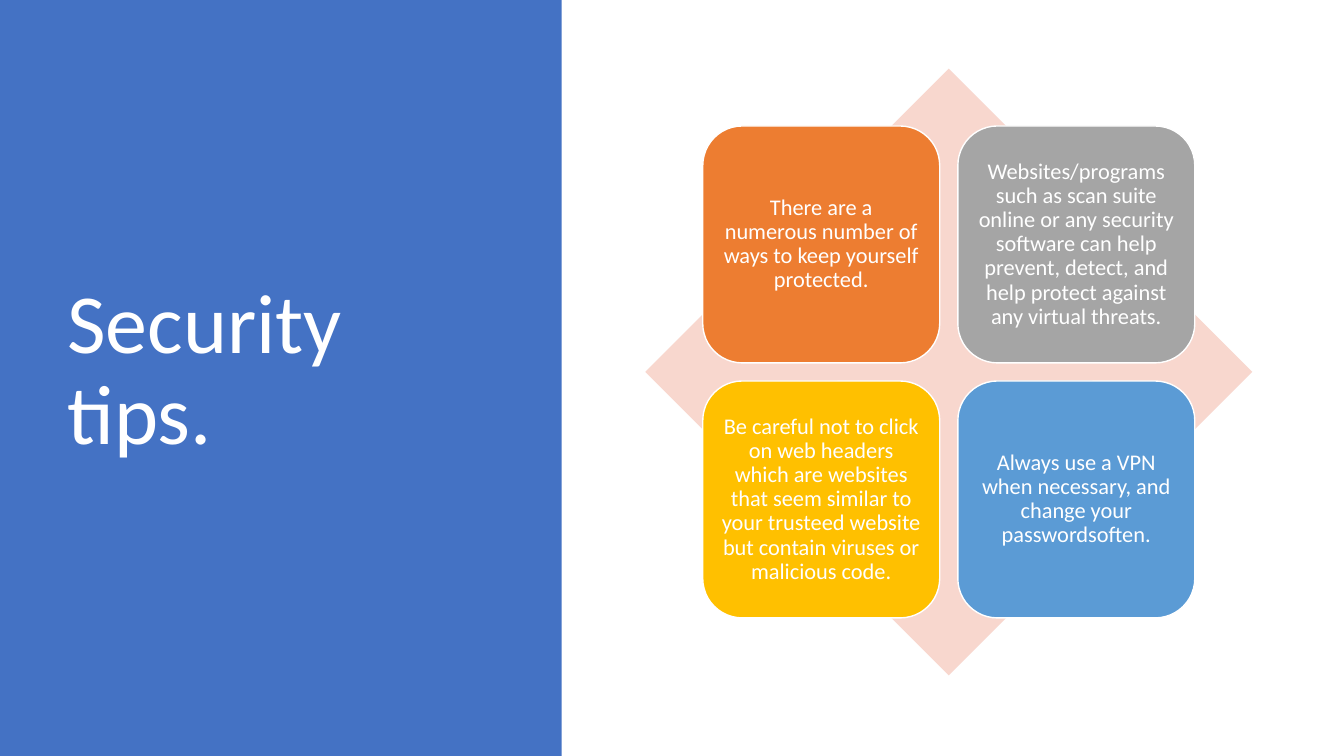
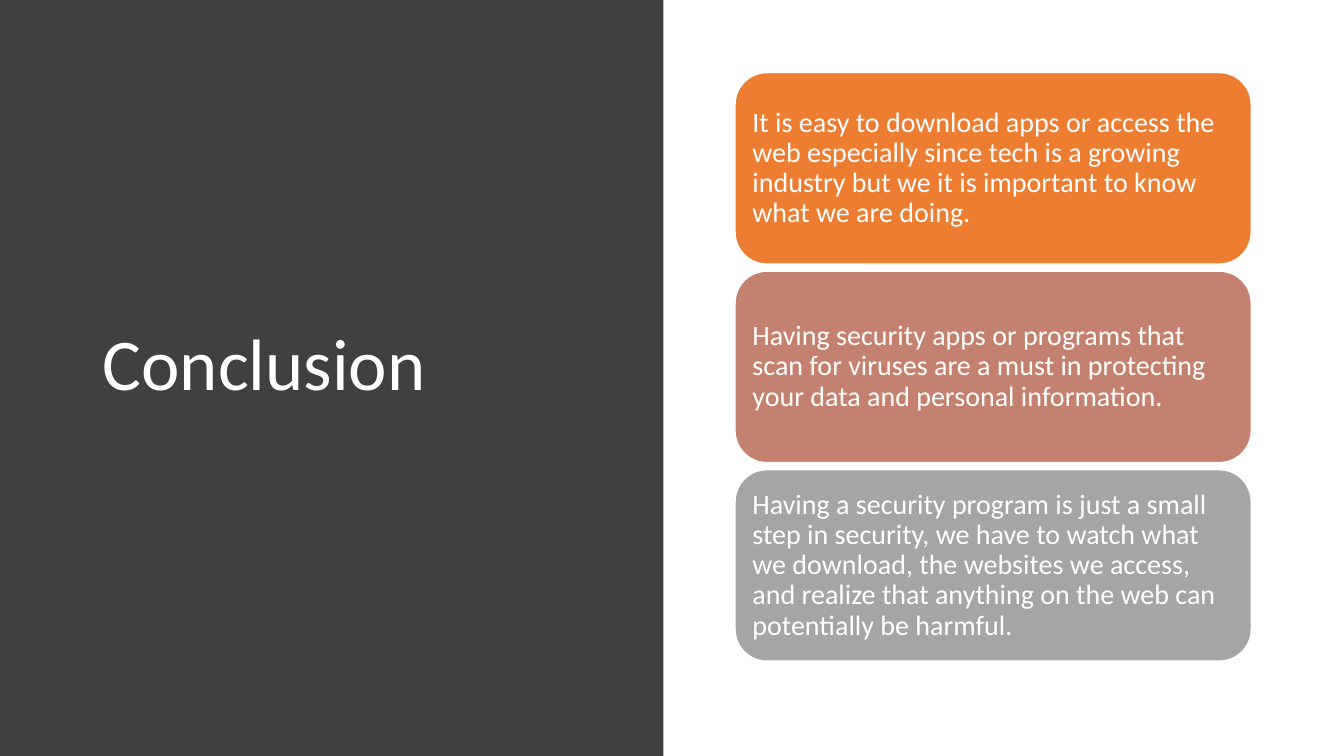
from pptx import Presentation
from pptx.dml.color import RGBColor
from pptx.enum.shapes import MSO_SHAPE
from pptx.enum.text import MSO_ANCHOR, PP_ALIGN
from pptx.util import Inches, Pt

WHITE = "FFFFFF"
ORANGE = "ED7D31"
GRAY = "A5A5A5"
SLIDE_WIDTH = 13.33
SLIDE_HEIGHT = 7.5


def color(hex_string):
    return RGBColor.from_string(hex_string)


class Deck:
    font_name = "Calibri"
    line_spacing = 0.9

    def __init__(self):
        self.presentation = Presentation()
        self.presentation.slide_width = Inches(SLIDE_WIDTH)
        self.presentation.slide_height = Inches(SLIDE_HEIGHT)
        self.slide = None

    def add_slide(self):
        layout = self.presentation.slide_layouts[6]
        self.slide = self.presentation.slides.add_slide(layout)

    def add_shape(self, kind, left, top, width, height, fill, outlined=False):
        shape = self.slide.shapes.add_shape(
            kind, Inches(left), Inches(top), Inches(width), Inches(height))
        shape.shadow.inherit = False
        shape.fill.solid()
        shape.fill.fore_color.rgb = color(fill)
        if outlined:
            shape.line.color.rgb = color(WHITE)
            shape.line.width = Pt(1)
        else:
            shape.line.fill.background()
        return shape

    def add_text(self, shape, text, size, align=PP_ALIGN.LEFT):
        frame = shape.text_frame
        frame.word_wrap = True
        frame.vertical_anchor = MSO_ANCHOR.MIDDLE
        paragraph = frame.paragraphs[0]
        paragraph.alignment = align
        paragraph.line_spacing = self.line_spacing
        run = paragraph.add_run()
        run.text = text
        run.font.name = self.font_name
        run.font.size = Pt(size)
        run.font.color.rgb = color(WHITE)

    def add_side_panel(self, width, fill):
        self.add_shape(MSO_SHAPE.RECTANGLE, 0, 0, width, SLIDE_HEIGHT, fill)

    def add_title(self, text, left, top, width, height, size):
        box = self.slide.shapes.add_textbox(
            Inches(left), Inches(top), Inches(width), Inches(height))
        self.add_text(box, text, size)

    def add_card(self, text, left, top, width, height, fill, size, inset, align):
        card = self.add_shape(
            MSO_SHAPE.ROUNDED_RECTANGLE, left, top, width, height, fill, True)
        frame = card.text_frame
        frame.margin_left = frame.margin_right = Inches(inset)
        frame.margin_top = frame.margin_bottom = Inches(inset)
        self.add_text(card, text, size, align)


def build_security_tips(deck):
    tips = [
        (ORANGE, "There are a numerous number of ways to keep yourself protected."),
        (GRAY, "Websites/programs such as scan suite online or any security "
               "software can help prevent, detect, and help protect against "
               "any virtual threats."),
        ("FFC000", "Be careful not to click on web headers which are websites "
                   "that seem similar to your trusteed website but contain "
                   "viruses or malicious code."),
        ("5B9BD5", "Always use a VPN when necessary, and change your passwordsoften."),
    ]
    card_size = 2.35
    pitch = 2.53
    deck.add_slide()
    deck.add_side_panel(5.57, "4472C4")
    deck.add_title("Security tips.", 0.57, 0.68, 4.16, 6.02, 60)
    deck.add_shape(MSO_SHAPE.DIAMOND, 6.4, 0.68, 6.02, 6.02, "F8D7CE")
    for index, (fill, text) in enumerate(tips):
        row, column = divmod(index, 2)
        deck.add_card(text, 6.97 + column * pitch, 1.25 + row * pitch,
                      card_size, card_size, fill, 16, 0.07, PP_ALIGN.CENTER)


def build_conclusion(deck):
    points = [
        (ORANGE, "It is easy to download apps or access the web especially since "
                 "tech is a growing industry but we it is important to know what "
                 "we are doing."),
        ("C48170", "Having security apps or programs that scan for viruses are a "
                   "must in protecting your data and personal information."),
        (GRAY, "Having a security program is just a small step in security, we "
               "have to watch what we download, the websites we access, and "
               "realize that anything on the web can potentially be harmful."),
    ]
    card_height = 1.9
    gap = 0.07
    deck.add_slide()
    deck.add_side_panel(6.58, "404040")
    deck.add_title("Conclusion", 0.92, 0.68, 5.24, 5.92, 52)
    for row, (fill, text) in enumerate(points):
        deck.add_card(text, 7.29, 0.72 + row * (card_height + gap),
                      5.12, card_height, fill, 20, 0.08, PP_ALIGN.LEFT)


def main():
    deck = Deck()
    build_security_tips(deck)
    build_conclusion(deck)
    deck.presentation.save("out.pptx")


if __name__ == "__main__":
    main()
